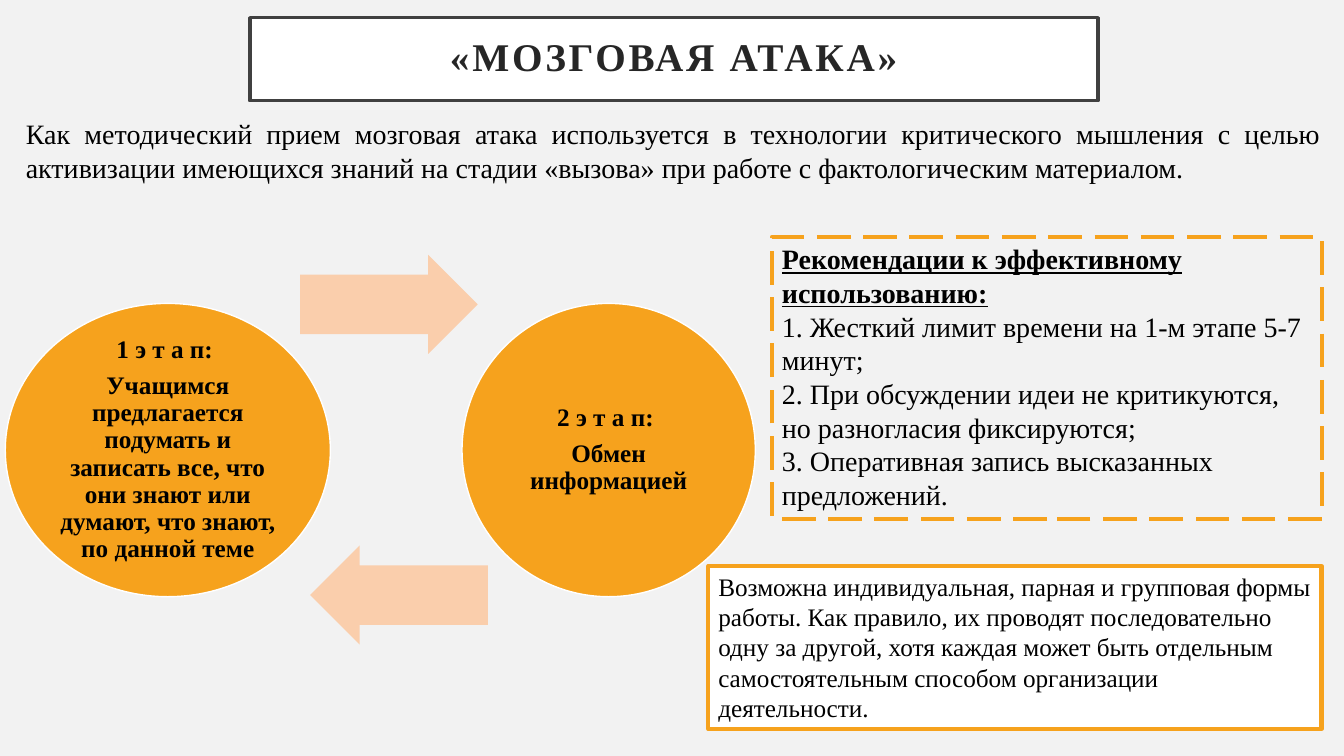
"""Build the slide about the brainstorming technique."""
from dataclasses import dataclass

from pptx import Presentation
from pptx.dml.color import RGBColor
from pptx.enum.dml import MSO_LINE
from pptx.enum.shapes import MSO_SHAPE
from pptx.enum.text import MSO_ANCHOR, PP_ALIGN
from pptx.util import Pt

RECTANGLE, ELLIPSE, ARROW = MSO_SHAPE.RECTANGLE, MSO_SHAPE.OVAL, MSO_SHAPE.RIGHT_ARROW
LEFT, CENTER, JUSTIFY = PP_ALIGN.LEFT, PP_ALIGN.CENTER, PP_ALIGN.JUSTIFY
TOP, MIDDLE = MSO_ANCHOR.TOP, MSO_ANCHOR.MIDDLE
LONG_DASH = MSO_LINE.LONG_DASH


@dataclass(frozen=True)
class Theme:
    font: str = "Times New Roman"
    background: str = "F2F2F2"
    white: str = "FFFFFF"
    orange: str = "F6A21D"
    peach: str = "FACEAC"
    frame: str = "404040"
    heading: str = "262626"
    text: str = "000000"
    title_size: int = 28
    body_size: int = 20
    small_size: int = 18


theme = Theme()


def add_figure(kind, bounds, fill=None, line=None, width=1):
    figure = page.shapes.add_shape(kind, *(Pt(length) for length in bounds))
    figure.shadow.inherit = False
    if fill:
        figure.fill.solid()
        figure.fill.fore_color.rgb = RGBColor.from_string(fill)
    else:
        figure.fill.background()
    if line:
        figure.line.color.rgb = RGBColor.from_string(line)
        figure.line.width = Pt(width)
    else:
        figure.line.fill.background()
    return figure


def write(box, texts, size, align=LEFT, anchor=TOP, bold=False, color=theme.text):
    frame = box.text_frame
    frame.word_wrap = True
    frame.vertical_anchor = anchor
    frame.text = "\n".join(texts)
    for para in frame.paragraphs:
        para.alignment = align
        para.font.name = theme.font
        para.font.size = Pt(size)
        para.font.bold = bold
        para.font.color.rgb = RGBColor.from_string(color)
    return frame


deck = Presentation()
deck.slide_width, deck.slide_height = Pt(960), Pt(540)
page = deck.slides.add_slide(deck.slide_layouts[6])
page.background.fill.solid()
page.background.fill.fore_color.rgb = RGBColor.from_string(theme.background)

stages = [
    ((3.8, 216.7, 232.2, 209.5), (214.3, 182, 126.9, 70.8), 0,
     ["1 э т а п: ", "Учащимся предлагается подумать и записать все, что они знают или "
      "думают, что знают, по данной теме"]),
    ((330, 216.7, 209.5, 209.5), (221.5, 389.6, 126.9, 70.8), 180,
     ["2 э т а п: ", "Обмен информацией"]),
]
for circle_bounds, arrow_bounds, rotation, texts in stages:
    circle = add_figure(ELLIPSE, circle_bounds, theme.orange, theme.white)
    frame = write(circle, texts, theme.small_size, CENTER, MIDDLE, True)
    frame.margin_left = frame.margin_right = Pt(2)
    frame.margin_top = frame.margin_bottom = Pt(2)
    for para in frame.paragraphs:
        para.line_spacing = 0.9
        para.space_after = Pt(6.3)
    arrow = add_figure(ARROW, arrow_bounds, theme.peach)
    arrow.adjustments[0] = 0.6
    arrow.rotation = rotation

title = add_figure(RECTANGLE, (178.4, 12.7, 605.8, 59.3), theme.white, theme.frame, 2.5)
frame = write(title, ["«МОЗГОВАЯ АТАКА»"], theme.title_size, CENTER, MIDDLE, True, theme.heading)
frame.margin_left = frame.margin_right = Pt(14.4)
frame.margin_top = frame.margin_bottom = Pt(14.4)
frame.paragraphs[0].line_spacing = 0.9
frame.paragraphs[0].runs[0].font._element.set("spc", "200")

intro = page.shapes.add_textbox(Pt(11.4), Pt(80), Pt(939), Pt(55.7))
write(intro, ["Как методический прием мозговая атака используется в технологии критического "
              "мышления с целью активизации имеющихся знаний на стадии «вызова» при работе с "
              "фактологическим материалом."], theme.body_size, JUSTIFY)

advice = add_figure(RECTANGLE, (551.4, 169.3, 392.8, 201.2), None, theme.orange, 3)
advice.line.dash_style = LONG_DASH
frame = write(advice, ["Рекомендации к эффективному использованию:",
                       "1. Жесткий лимит времени на 1-м этапе 5-7 минут;",
                       "2. При обсуждении идеи не критикуются, но разногласия фиксируются;",
                       "3. Оперативная запись высказанных предложений."], theme.body_size)
frame.paragraphs[0].font.bold = True
frame.paragraphs[0].font.underline = True

forms = add_figure(RECTANGLE, (506, 404.4, 438, 116.3), theme.white, theme.orange, 3)
write(forms, ["Возможна индивидуальная, парная и групповая формы работы. Как правило, их "
              "проводят последовательно одну за другой, хотя каждая может быть отдельным "
              "самостоятельным способом организации деятельности."], theme.small_size)

deck.save("out.pptx")
